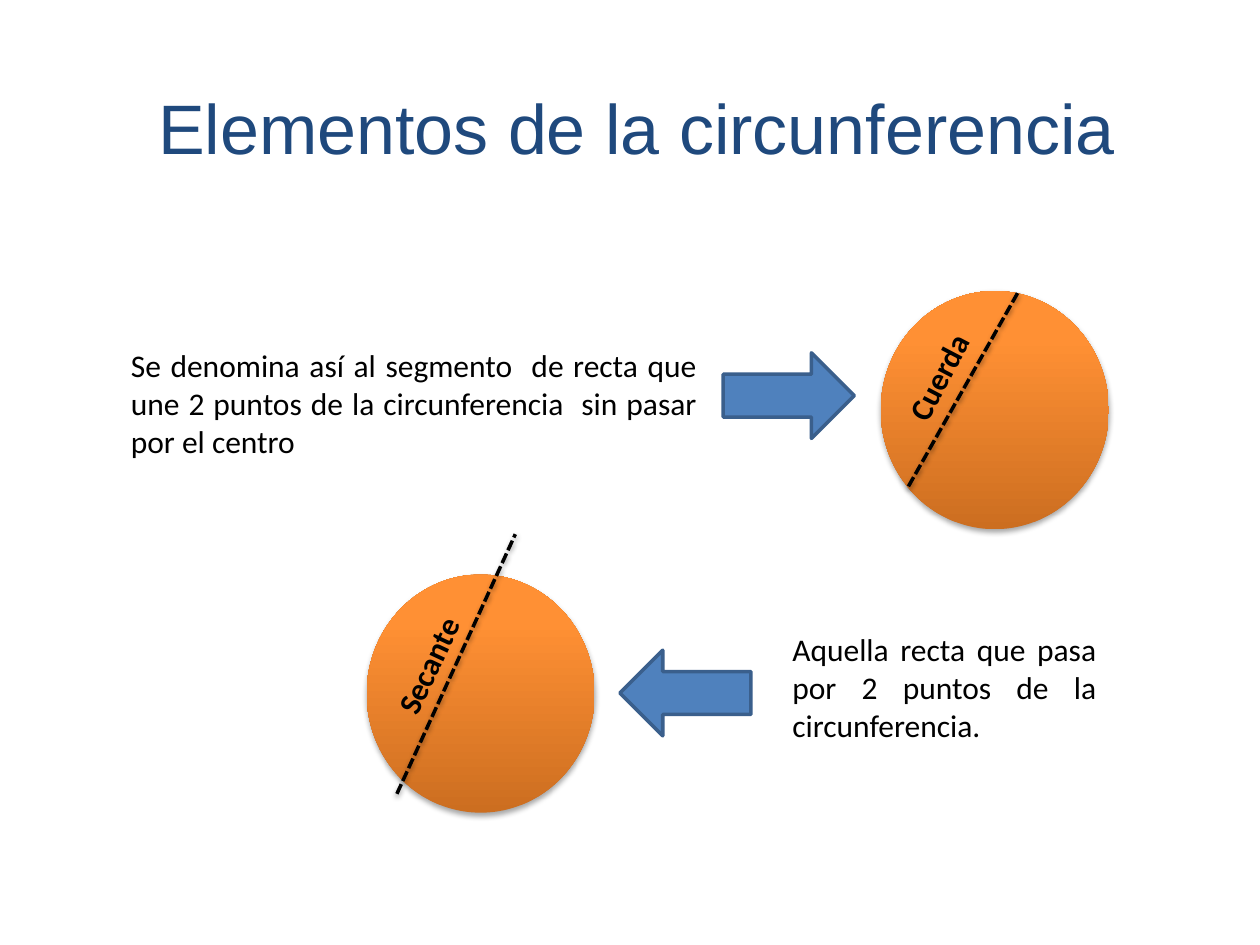
from dataclasses import dataclass

from lxml.etree import SubElement
from pptx import Presentation
from pptx.dml.color import RGBColor
from pptx.enum.dml import MSO_LINE_DASH_STYLE as DASH
from pptx.enum.shapes import MSO_CONNECTOR as CONNECTOR, MSO_SHAPE as SHAPE
from pptx.enum.text import MSO_ANCHOR as ANCHOR, MSO_AUTO_SIZE as AUTOSIZE, PP_ALIGN as ALIGN
from pptx.oxml.ns import qn
from pptx.util import Inches, Pt


@dataclass(frozen=True)
class Theme:
    title_color: str = "1F497D"
    ink: str = "000000"
    arrow_fill: str = "4F81BD"
    arrow_line: str = "3A5F8C"
    disc_stops: tuple = ((0, "CC6E20"), (80, "FF9034"), (100, "FF9136"))
    title_font: str = "Arial"
    body_font: str = "Calibri"
    title_size: int = 40
    body_size: int = 18
    line_width: int = 2


class Board:
    """Draws on one page; lengths are columns and rows of a 100 x 75 grid."""

    def __init__(self, deck, theme):
        self.theme = theme
        self.column = deck.slide_width / 100
        self.row = deck.slide_height / 75
        self.page = deck.slides.add_slide(deck.slide_layouts[5])

    def place(self, *cells):
        units = (self.column, self.row) * 2
        return [round(cell * unit) for cell, unit in zip(cells, units)]

    def fill_text(self, box, text, align, **formats):
        frame = box.text_frame
        frame.word_wrap = True
        frame.auto_size = AUTOSIZE.SHAPE_TO_FIT_TEXT
        frame.vertical_anchor = ANCHOR.TOP
        para = frame.paragraphs[0]
        para.alignment = align
        span = para.add_run()
        span.text = text
        color = formats.pop("color", self.theme.ink)
        settings = {"name": self.theme.body_font, "size": Pt(self.theme.body_size)} | formats
        for name, value in settings.items():
            setattr(span.font, name, value)
        span.font.color.rgb = RGBColor.from_string(color)

    def title(self, text, cells):
        box = self.page.shapes.title
        box.left, box.top, box.width, box.height = self.place(*cells)
        self.fill_text(box, text, ALIGN.CENTER, name=self.theme.title_font,
                       size=Pt(self.theme.title_size), color=self.theme.title_color)

    def text(self, text, cells, align=ALIGN.JUSTIFY, angle=0, parent=None, **formats):
        box = (parent or self.page).shapes.add_textbox(*self.place(*cells))
        box.rotation = angle
        self.fill_text(box, text, align, **formats)

    def shadow(self, shape, alpha, distance):
        properties = shape._element.spPr
        for old in properties.findall(qn("a:effectLst")):
            properties.remove(old)
        effects = SubElement(properties, qn("a:effectLst"))
        outer = SubElement(effects, qn("a:outerShdw"), blurRad=str(Pt(3.1)),
                           dist=str(Pt(distance)), dir="5400000", rotWithShape="0")
        color = SubElement(outer, qn("a:srgbClr"), val=self.theme.ink)
        SubElement(color, qn("a:alpha"), val=str(alpha * 1000))

    def disc(self, parent, cells):
        disc = parent.shapes.add_shape(SHAPE.OVAL, *self.place(*cells))
        # Three-stop gradient, running from the bottom up
        properties = disc._element.spPr
        gradient = SubElement(properties, qn("a:gradFill"), rotWithShape="1")
        stops = SubElement(gradient, qn("a:gsLst"))
        for position, color in self.theme.disc_stops:
            stop = SubElement(stops, qn("a:gs"), pos=str(position * 1000))
            SubElement(stop, qn("a:srgbClr"), val=color)
        SubElement(gradient, qn("a:lin"), ang="16200000", scaled="0")
        disc.line.fill.background()
        self.shadow(disc, 35, 1.8)

    def dashed_line(self, parent, ends):
        line = parent.shapes.add_connector(CONNECTOR.STRAIGHT, *self.place(*ends))
        line.line.color.rgb = RGBColor.from_string(self.theme.ink)
        line.line.width = Pt(self.theme.line_width)
        line.line.dash_style = DASH.SQUARE_DOT
        self.shadow(line, 38, 1.6)

    def circle_figure(self, label, disc, label_at, angle, ends):
        group = self.page.shapes.add_group_shape()
        self.disc(group, (*disc, 18.1, 18.9))
        self.text(label, (*label_at, 20.5, 4), ALIGN.CENTER, angle, group, bold=True)
        self.dashed_line(group, ends)

    def arrow(self, left, top, angle=0):
        arrow = self.page.shapes.add_shape(SHAPE.RIGHT_ARROW, *self.place(left, top, 10.4, 6.8))
        arrow.rotation = angle
        arrow.shadow.inherit = False
        arrow.fill.solid()
        arrow.fill.fore_color.rgb = RGBColor.from_string(self.theme.arrow_fill)
        arrow.line.color.rgb = RGBColor.from_string(self.theme.arrow_line)
        arrow.line.width = Pt(self.theme.line_width)


def main():
    deck = Presentation()
    deck.slide_width, deck.slide_height = Inches(10), Inches(7.5)
    board = Board(deck, Theme())
    board.title("Elementos de la circunferencia", (6, 6.2, 89, 14.5))

    # Circles with their lines and labels
    board.circle_figure("Cuerda", disc=(69.9, 23.1), label_at=(64.2, 27.9), angle=297.7,
                        ends=(72.1, 38.6, 80.8, 23.2))
    board.circle_figure("Secante", disc=(29.1, 45.6), label_at=(23.7, 50.8), angle=295.1,
                        ends=(31.5, 63, 40.9, 42.4))

    # Definitions
    board.text("Se denomina así al segmento  de recta que une 2 puntos de la "
               "circunferencia  sin pasar por el centro", (9.4, 27, 46.9, 10.1))
    board.text("Aquella recta que pasa por 2 puntos de la circunferencia.",
               (61.9, 49.5, 26.1, 10.1))

    # Arrows from each definition to its circle
    board.arrow(49.2, 51.6, angle=180)
    board.arrow(57.4, 28)

    deck.save("out.pptx")


if __name__ == "__main__":
    main()
